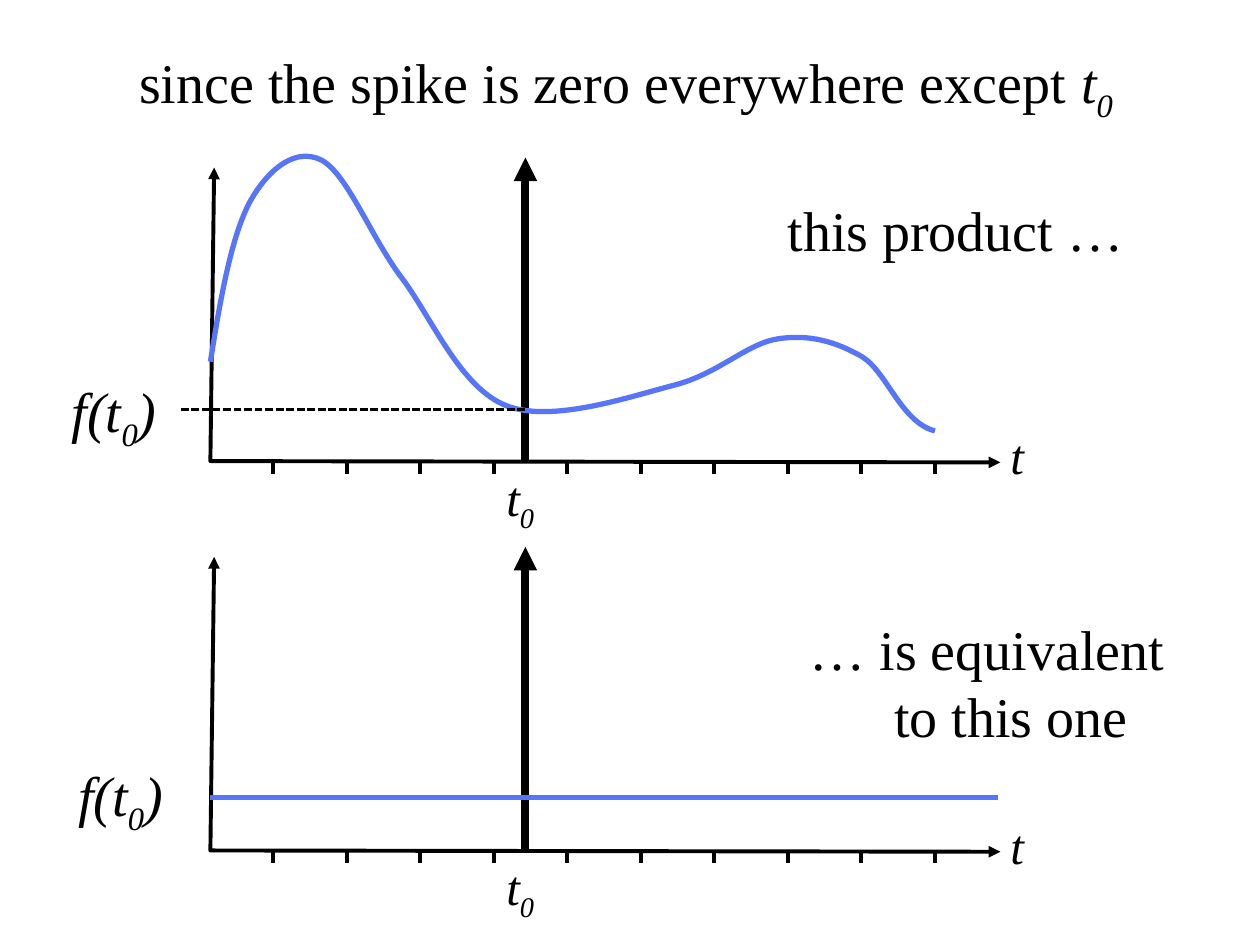
"""Build a slide on the product of a function and a spike."""
import pptx
import pptx.dml.color
import pptx.enum.dml
import pptx.enum.shapes
import pptx.enum.text
import pptx.oxml
import pptx.oxml.ns
import pptx.util

Inches = pptx.util.Inches
Pt = pptx.util.Pt
qn = pptx.oxml.ns.qn
FONT = "Times New Roman"
BLACK = "000000"
BLUE = "5675F8"
STEP = 5.25 / 9
CURVE = [
    (1.67, 2.87),
    (1.75, 2.36), (1.84, 1.86), (1.99, 1.59),
    (2.14, 1.33), (2.35, 1.17), (2.55, 1.27),
    (2.76, 1.38), (2.95, 1.9), (3.2, 2.22),
    (3.44, 2.55), (3.66, 3.08), (4.02, 3.22),
    (4.38, 3.36), (4.99, 3.15), (5.34, 3.06),
    (5.7, 2.97), (5.92, 2.73), (6.17, 2.69),
    (6.42, 2.65), (6.63, 2.71), (6.84, 2.83),
    (7.04, 2.95), (7.15, 3.35), (7.42, 3.42),
]
TZERO = [("t", "i"), ("0", "is")]
VALUE = [("f(t", "i"), ("0", "is"), (")", "i")]


def color(code):
    """Return the colour for a hex string."""
    return pptx.dml.color.RGBColor.from_string(code)


def pen(shape, code, width, ends=(), dash=None):
    """Set the line of a shape, with arrowheads at the named ends."""
    line = shape.line
    line.color.rgb = color(code)
    line.width = Pt(width)
    if dash:
        line.dash_style = dash
    props = shape.element.spPr
    for end in ends:
        tip = pptx.oxml.parse_xml(
            f'<a:{end} {pptx.oxml.ns.nsdecls("a")} type="triangle"/>')
        props.find(qn("a:ln")).append(tip)
    if props.find(qn("a:effectLst")) is None:
        props.append(props.makeelement(qn("a:effectLst"), {}))


def line(slide, start, end, code, width, ends=(), dash=None):
    """Add a straight line between two points in inches."""
    kind = pptx.enum.shapes.MSO_CONNECTOR.STRAIGHT
    item = slide.shapes.add_connector(kind, *map(Inches, start + end))
    pen(item, code, width, ends, dash)


def outline(slide, points):
    """Add an open, unfilled outline through points in inches."""
    first, *rest = [(Inches(x), Inches(y)) for x, y in points]
    build = slide.shapes.build_freeform(*first)
    build.add_line_segments(rest, close=False)
    shape = build.convert_to_shape()
    shape.shadow.inherit = False
    shape.fill.background()
    return shape


def bend(shape):
    """Turn each three line segments into one cubic curve."""
    segs = list(shape.element.iter(qn("a:lnTo")))
    for i in range(0, len(segs), 3):
        cubic = segs[i].makeelement(qn("a:cubicBezTo"), {})
        segs[i].addprevious(cubic)
        for seg in segs[i:i + 3]:
            cubic.append(seg[0])
            seg.getparent().remove(seg)


def write(shape, box, runs, size, fit=False):
    """Place a text shape and fill it run by run."""
    shape.left, shape.top, shape.width, shape.height = map(Inches, box)
    frame = shape.text_frame
    frame.word_wrap = True
    frame.vertical_anchor = pptx.enum.text.MSO_ANCHOR.TOP
    auto = pptx.enum.text.MSO_AUTO_SIZE
    frame.auto_size = auto.SHAPE_TO_FIT_TEXT if fit else auto.NONE
    para = frame.paragraphs[0]
    for text, style in runs:
        run = para.add_run()
        run.text = text
        font = run.font
        font.name = FONT
        font.size = Pt(size)
        font.color.rgb = color(BLACK)
        font.italic = "i" in style
        if "s" in style:
            props = list(shape.element.iter(qn("a:rPr")))[-1]
            props.set("baseline", "-25000")
    return para


def label(slide, box, runs):
    """Add a small label that fits its text."""
    write(slide.shapes.add_textbox(0, 0, 0, 0), box, runs, 28, True)


def phrase(shape, box, runs):
    """Write large centred text with a hanging indent."""
    para = write(shape, box, runs, 32)
    para.alignment = pptx.enum.text.PP_ALIGN.CENTER
    para.space_before = Pt(6.4)
    props = next(shape.element.iter(qn("a:pPr")))
    props.set("marL", str(Inches(0.38)))
    props.set("indent", str(Inches(-0.38)))


def plot(slide, top):
    """Add axes, ticks, a spike and axis labels."""
    base = top + 2.33
    axes = outline(slide, [(1.7, top), (1.67, base), (7.94, base + 0.01)])
    pen(axes, BLACK, 2.25, ("headEnd", "tailEnd"))
    for i in range(10):
        x = 2.17 + i * STEP
        line(slide, (x, base), (x, base + 0.1), BLACK, 2.25)
    label(slide, (7.92, top + 2, 0.5, 0.58), [("t", "i")])
    line(slide, (4.17, top - 0.08), (4.17, base), BLACK, 4.5, ("headEnd",))
    label(slide, (3.92, base, 0.83, 0.57), TZERO)


def main():
    """Build and save the slide."""
    deck = pptx.Presentation()
    deck.slide_width = Inches(10)
    deck.slide_height = Inches(7.5)
    slide = deck.slides.add_slide(deck.slide_layouts[5])
    phrase(slide.shapes.title, (0, 0.33, 10, 0.67), [
        ("since the spike is zero everywhere except ", ""),
        ("t", "i"), ("0 ", "is")])
    plot(slide, 1.33)
    curve = outline(slide, CURVE)
    bend(curve)
    pen(curve, BLUE, 3)
    plot(slide, 4.42)
    line(slide, (1.67, 6.33), (7.92, 6.33), BLUE, 3)
    line(slide, (4.17, 3.25), (1.42, 3.25), BLACK, 1.5,
         dash=pptx.enum.dml.MSO_LINE.SQUARE_DOT)
    for box, runs in [
        ((0.03, 2.94, 1.75, 0.67), VALUE),
        ((0.08, 5.99, 1.75, 0.67), VALUE),
        ((6, 1.5, 3.17, 0.92), [("this product …", "")]),
        ((6.17, 4.83, 3.33, 0.92), [("… is equivalent to this one", "")]),
    ]:
        phrase(slide.shapes.add_textbox(0, 0, 0, 0), box, runs)
    deck.save("out.pptx")


if __name__ == "__main__":
    main()
